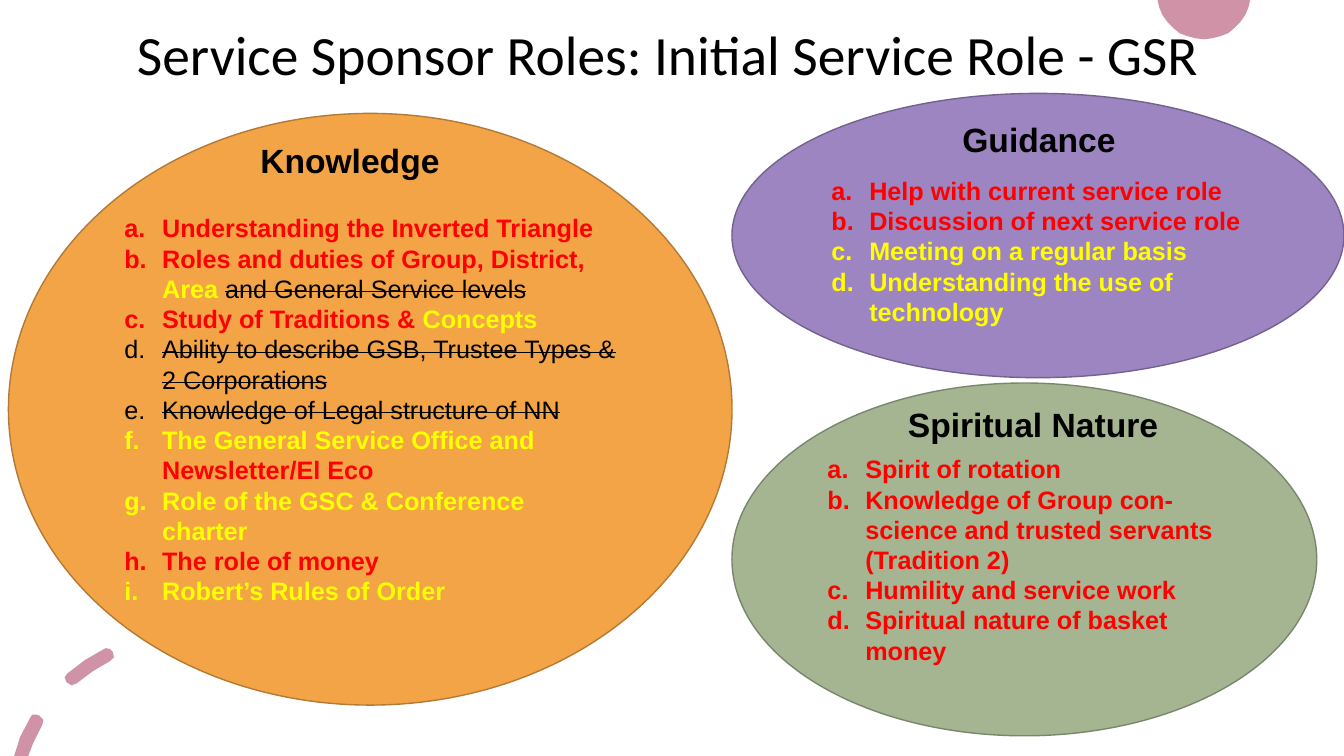
import math

import pptx
import pptx.util
import pptx.dml.color
import pptx.enum.shapes
import pptx.enum.text
import pptx.oxml.ns
import lxml.etree

COLORS = {
    "black": "000000", "red": "FF0000", "yellow": "FFFF00", "pink": "D092A7",
    "orange": "F3A447", "orange edge": "B47935",
    "green": "A5B592", "green edge": "7A866C",
    "purple": "9C85C0", "purple edge": "73628E",
}

presentation = pptx.Presentation()
presentation.slide_width = pptx.util.Inches(13.33)
presentation.slide_height = pptx.util.Inches(7.5)
slide = presentation.slides.add_slide(presentation.slide_layouts[6])

# The slide is 45 rows high; grid cells are square
CELL = presentation.slide_height / 45


def color(name):
    return pptx.dml.color.RGBColor.from_string(COLORS[name])


def write(paragraph, text, size=18, font="Arial", ink="black", bold=False, strike=False):
    run = paragraph.add_run()
    run.text = text
    run.font.size = pptx.util.Pt(size)
    run.font.name = font
    run.font.bold = bold
    run.font.color.rgb = color(ink)
    if strike:
        run.font._element.set("strike", "sngStrike")


# Pink disc cut by the top edge, in inches
disc = []
for step in range(17):
    angle = math.radians(10 + 10 * step)
    disc.append((11.94 + 0.47 * math.cos(angle), -0.08 + 0.47 * math.sin(angle)))

# Two pink dashes at the lower left, in inches
lower_dash = [(0.36, 7.09), (0.32, 7.09), (0.3, 7.12), (0.2, 7.31), (0.14, 7.5),
              (0.28, 7.5), (0.33, 7.37), (0.42, 7.19), (0.43, 7.14), (0.39, 7.1)]
upper_dash = [(1.05, 6.43), (1.03, 6.44), (0.84, 6.55), (0.67, 6.68), (0.64, 6.72),
              (0.66, 6.77), (0.71, 6.8), (0.76, 6.78), (0.92, 6.66), (1.09, 6.56),
              (1.13, 6.52), (1.12, 6.47), (1.09, 6.44)]

for contours in ([disc], [lower_dash, upper_dash]):
    builder = slide.shapes.build_freeform(*contours[0][0], scale=pptx.util.Inches(1) / 100)
    builder = slide.shapes.build_freeform(
        *[round(100 * value) for value in contours[0][0]], scale=pptx.util.Inches(0.01))
    for number, contour in enumerate(contours):
        points = [(round(100 * x), round(100 * y)) for x, y in contour]
        if number > 0:
            builder.move_to(*points[0])
        builder.add_line_segments(points[1:], close=True)
    shape = builder.convert_to_shape()
    shape.shadow.inherit = False
    shape.fill.solid()
    shape.fill.fore_color.rgb = color("pink")
    shape.line.fill.background()

# Ovals: fill, place in cells, top inset in inches, items made of (text, ink) runs;
# black runs are struck out, the others are bold
ovals = [
    ("orange", (0.5, 6.75, 43.06, 35.22), 0.05, [
        [("Understanding the Inverted Triangle", "red")],
        [("Roles and duties of Group, District, ", "red"), ("Area ", "yellow"),
         ("and General Service levels", "black")],
        [("Study of Traditions & ", "red"), ("Concepts", "yellow")],
        [("Ability to describe GSB, Trustee Types & 2 Corporations", "black")],
        [("Knowledge of Legal structure of NN", "black")],
        [("The General Service Office and ", "yellow"), ("Newsletter/El Eco", "red")],
        [("Role of the GSC & Conference charter", "yellow")],
        [("The role of money", "red")],
        [("Robert’s Rules of Order", "yellow")],
    ]),
    ("green", (43.56, 22.8, 34.8, 21), 0.05, [
        [("Spirit of rotation", "red")],
        [("Knowledge of Group con-science and trusted servants (Tradition 2)", "red")],
        [("Humility and service work", "red")],
        [("Spiritual nature of basket money", "red")],
    ]),
    ("purple", (43.56, 5.56, 36.42, 16.92), 0.35, [
        [("Help with current service role", "red")],
        [("Discussion of next service role", "red")],
        [("Meeting on a regular basis", "yellow")],
        [("Understanding the use of technology", "yellow")],
    ]),
]
for fill, place, top_inset, items in ovals:
    shape = slide.shapes.add_shape(pptx.enum.shapes.MSO_SHAPE.OVAL,
                                   *[round(value * CELL) for value in place])
    shape.shadow.inherit = False
    shape.fill.solid()
    shape.fill.fore_color.rgb = color(fill)
    shape.line.color.rgb = color(fill + " edge")
    shape.line.width = pptx.util.Pt(1)
    frame = shape.text_frame
    frame.word_wrap = True
    frame.margin_top = pptx.util.Inches(top_inset)
    frame.vertical_anchor = pptx.enum.text.MSO_ANCHOR.MIDDLE
    for index, item in enumerate(items):
        paragraph = frame.paragraphs[0] if index == 0 else frame.add_paragraph()
        paragraph.alignment = pptx.enum.text.PP_ALIGN.LEFT
        # Lettered list with a hanging indent
        properties = paragraph._p.get_or_add_pPr()
        indent = pptx.util.Pt(27)
        properties.set("marL", str(indent))
        properties.set("indent", str(-indent))
        numbering = lxml.etree.SubElement(properties, pptx.oxml.ns.qn("a:buAutoNum"))
        numbering.set("type", "alphaLcPeriod")
        for text, ink in item:
            struck = ink == "black"
            write(paragraph, text, ink=ink, bold=not struck, strike=struck)

# Title and oval headings
headings = [
    ("Service Sponsor Roles: Initial Service Role - GSR", (7.56, 1.26, 64.86, 4.32),
     {"size": 39.6, "font": "Calibri"}),
    ("Knowledge", (14.9, 8.04, 13.14, 3), {"size": 24, "bold": True}),
    ("Spiritual Nature", (53.44, 23.76, 17.58, 3), {"size": 24, "bold": True}),
    ("Guidance", (56.68, 6.78, 11.04, 3), {"size": 24, "bold": True}),
]
for text, place, style in headings:
    box = slide.shapes.add_textbox(*[round(value * CELL) for value in place])
    frame = box.text_frame
    frame.word_wrap = True
    if text.startswith("Service"):
        frame.vertical_anchor = pptx.enum.text.MSO_ANCHOR.MIDDLE
        frame.paragraphs[0].line_spacing = 0.9
    write(frame.paragraphs[0], text, **style)

presentation.save("out.pptx")
